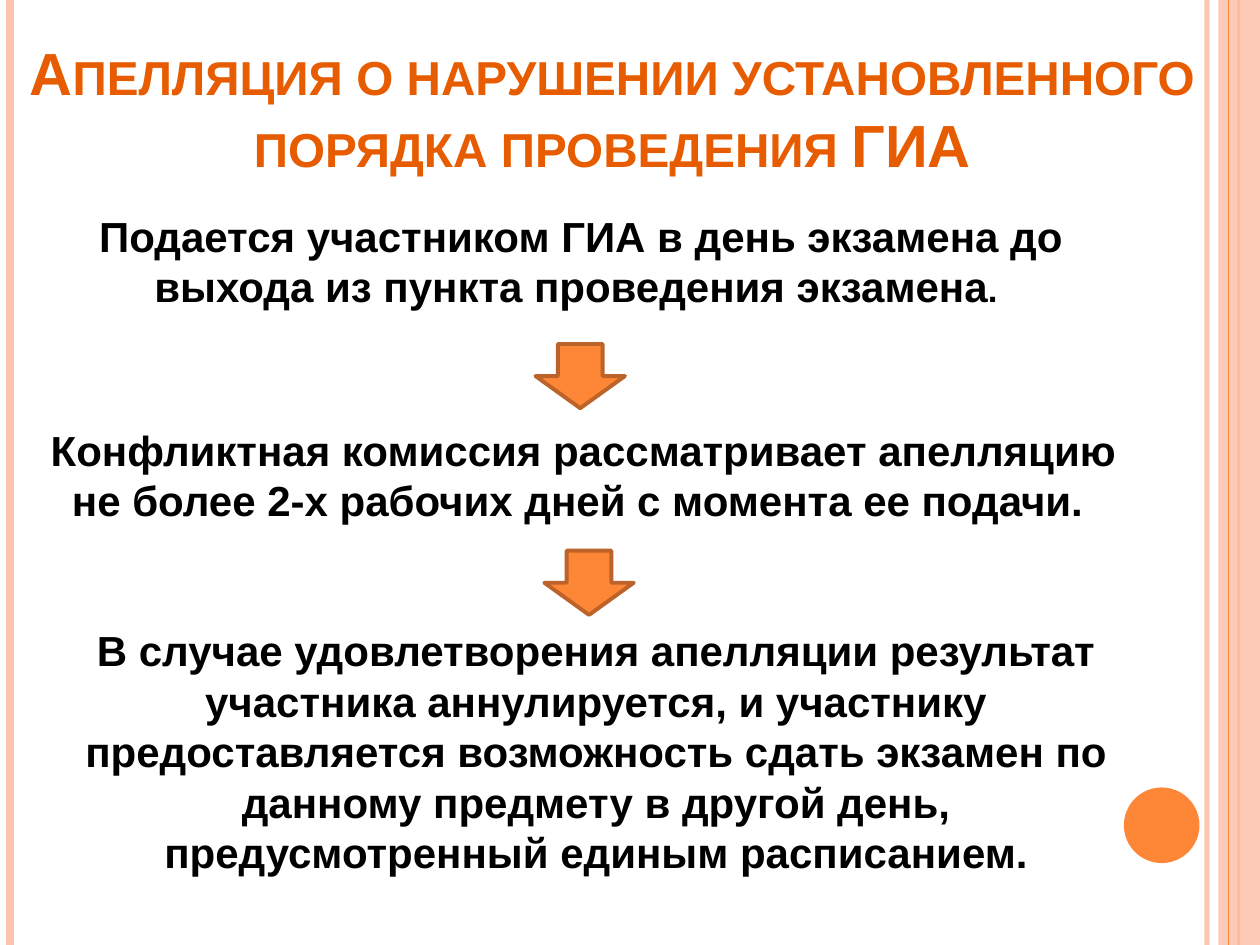
import pptx
import pptx.util
import pptx.dml.color
import pptx.enum.shapes
import pptx.enum.text
import pptx.oxml
import pptx.oxml.ns
import lxml.etree

KIND = pptx.enum.shapes.MSO_SHAPE
ANCHOR = pptx.enum.text.MSO_ANCHOR
FIT = pptx.enum.text.MSO_AUTO_SIZE
COLS, ROWS = 100, 75
PEACH, ORANGE, RUST, TITLE, BLACK = "FEC3AE", "FE8637", "BC6329", "E75C01", "000000"


def paint(form, tone, alpha=None):
    if hasattr(form, "solid"):
        form.solid()
        form = form.fore_color
    form.rgb = pptx.dml.color.RGBColor.from_string(tone)


def fade(shape, share):
    for tone in shape._element.spPr.iter(pptx.oxml.ns.qn("a:srgbClr")):
        node = lxml.etree.SubElement(tone, pptx.oxml.ns.qn("a:alpha"))
        node.set("val", str(share * 1000))


def write(para, text, size=24, tone=BLACK, font="Arial", bold=True, caps=False):
    run = para.add_run()
    run.text = text
    run.font.size = pptx.util.Pt(size)
    run.font.name = font
    run.font.bold = bold
    paint(run.font.fill, tone)
    if caps:
        run.font._element.set("cap", "small")


class Board:
    def __init__(self, deck):
        self.wide = deck.slide_width
        self.high = deck.slide_height
        self.slide = deck.slides.add_slide(deck.slide_layouts[6])
        paint(self.slide.background.fill, "FFFFFF")

    def col(self, count):
        return round(self.wide * count / COLS)

    def row(self, count):
        return round(self.high * count / ROWS)

    def box(self, left, top, wide, high):
        return self.col(left), self.row(top), self.col(wide), self.row(high)

    def stripe(self, left, tone, width, alpha=None):
        spot = self.col(left)
        line = self.slide.shapes.add_connector(
            pptx.enum.shapes.MSO_CONNECTOR.STRAIGHT, spot, 0, spot, self.high)
        paint(line.line.fill, tone)
        line.line.width = pptx.util.Pt(width)
        lxml.etree.SubElement(line._element.spPr, pptx.oxml.ns.qn("a:effectLst"))
        if alpha:
            fade(line, alpha)

    def shape(self, kind, place, tone, edge=None, alpha=None):
        item = self.slide.shapes.add_shape(kind, *self.box(*place))
        item.shadow.inherit = False
        paint(item.fill, tone)
        if edge:
            paint(item.line.fill, edge)
            item.line.width = pptx.util.Pt(2.25)
        else:
            item.line.fill.background()
        if alpha:
            fade(item, alpha)

    def text(self, place, *parts, anchor=ANCHOR.TOP, fit=FIT.SHAPE_TO_FIT_TEXT):
        frame = self.slide.shapes.add_textbox(*self.box(*place)).text_frame
        frame.word_wrap = True
        frame.auto_size = fit
        frame.vertical_anchor = anchor
        para = frame.paragraphs[0]
        para.alignment = pptx.enum.text.PP_ALIGN.CENTER
        for words, style in parts:
            write(para, words, **style)


def main():
    deck = pptx.Presentation()
    deck.slide_width = pptx.util.Inches(10)
    deck.slide_height = pptx.util.Inches(7.5)
    board = Board(deck)

    board.stripe(95.8, PEACH, 3, alpha=93)
    board.stripe(0.8, PEACH, 4.5)
    board.stripe(98.3, ORANGE, 1.5)
    board.shape(KIND.RECTANGLE, (96.7, 0, 3.3, ROWS), PEACH, alpha=87)
    board.stripe(97.5, ORANGE, 0.75)
    board.shape(KIND.OVAL, (89.2, 62.5, 6, 6), ORANGE)

    board.text((0, 2.1, 97.2, 12.6),
               ("Апелляция о нарушении установленного порядка проведения ГИА",
                dict(size=34, tone=TITLE, caps=True)),
               anchor=ANCHOR.BOTTOM, fit=FIT.NONE)
    board.text((2, 16.2, 88.2, 9.1),
               ("Подается участником ГИА в день экзамена до выхода из пункта "
                "проведения экзамена", {}),
               (". ", dict(size=20)))
    board.text((2.2, 33.2, 88.2, 12.1),
               ("Конфликтная комиссия рассматривает апелляцию не более 2-х "
                "рабочих дней с момента ее подачи. ", {}))
    board.text((3.2, 49.1, 88.2, 21.2),
               ("В случае удовлетворения апелляции результат участника "
                "аннулируется, и участнику предоставляется возможность сдать "
                "экзамен по данному предмету в другой день, предусмотренный "
                "единым расписанием.", {}))

    for left, top in ((42.5, 27.3), (43.2, 43.7)):
        board.shape(KIND.DOWN_ARROW, (left, top, 7.1, 5.1), ORANGE, edge=RUST)

    deck.save("out.pptx")


if __name__ == "__main__":
    main()
